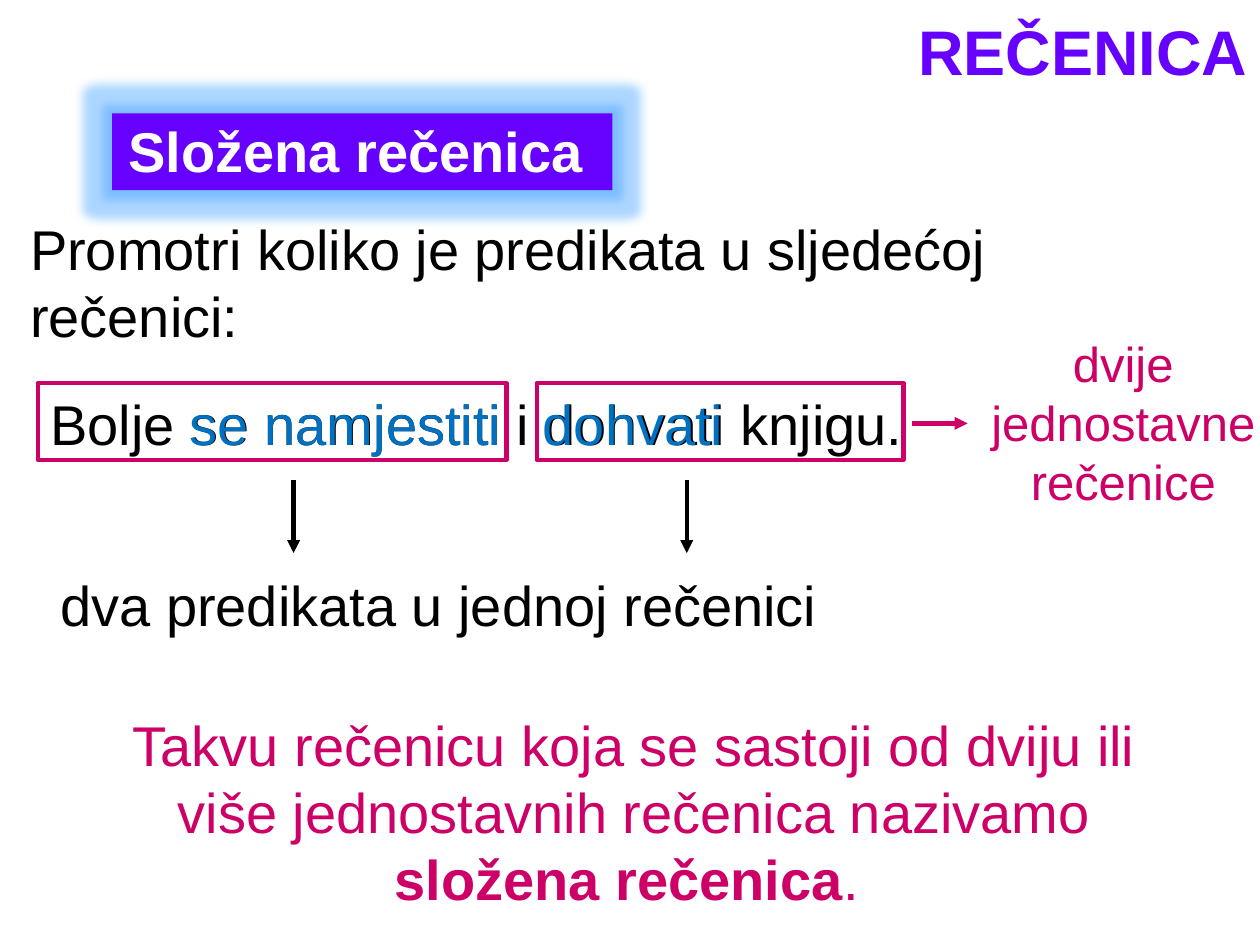
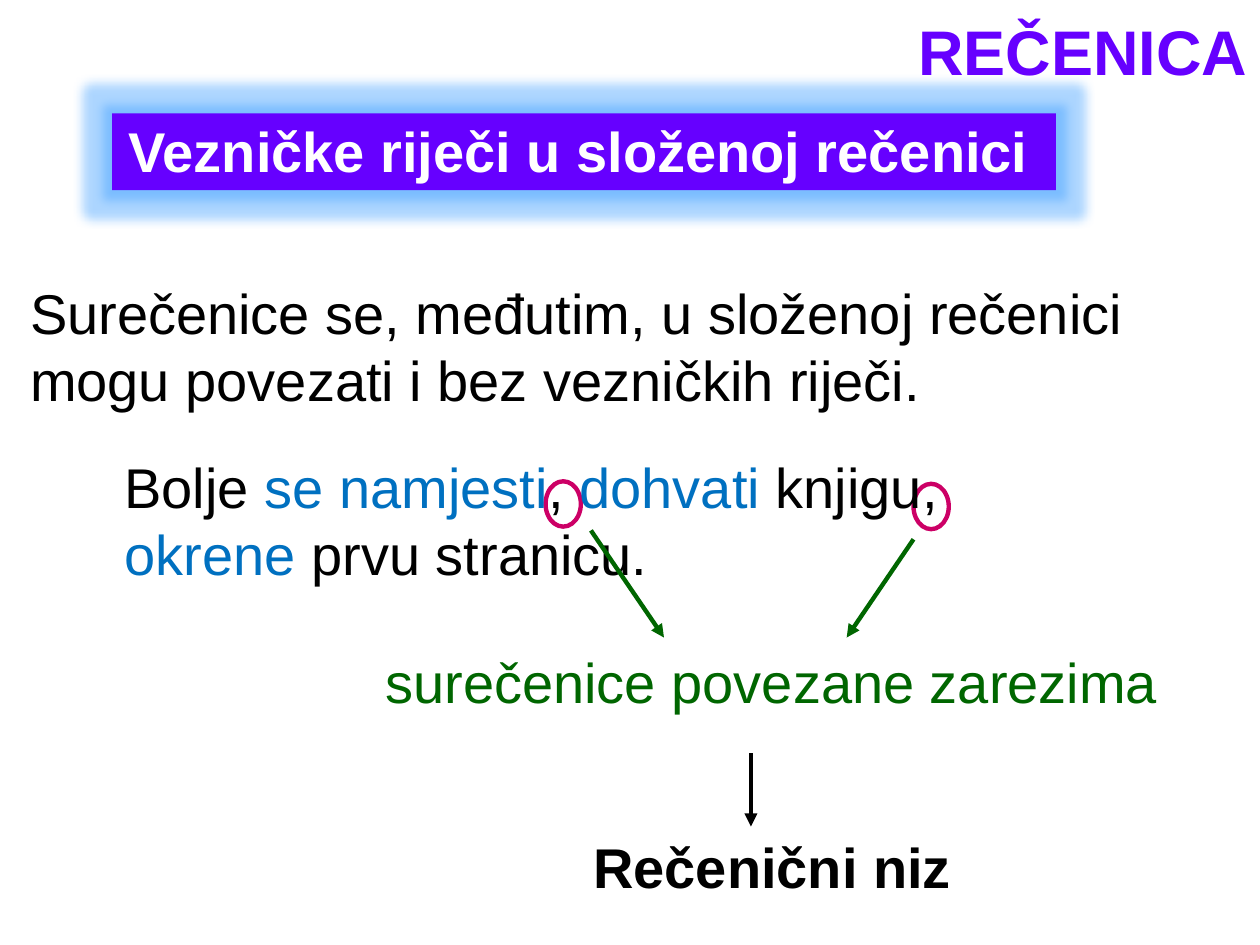
from lxml.etree import SubElement
from pptx import Presentation
from pptx.dml.color import RGBColor
from pptx.enum.shapes import MSO_CONNECTOR, MSO_SHAPE
from pptx.enum.text import MSO_ANCHOR, MSO_AUTO_SIZE, PP_ALIGN
from pptx.oxml import parse_xml
from pptx.oxml.ns import nsdecls, qn
from pptx.util import Inches, Pt

WHITE = RGBColor(0xFF, 0xFF, 0xFF)
BLACK = RGBColor(0x00, 0x00, 0x00)
VIOLET = RGBColor(0x66, 0x00, 0xFF)
MAGENTA = RGBColor(0xCC, 0x00, 0x66)
BLUE = RGBColor(0x00, 0x70, 0xC0)
GREEN = RGBColor(0x00, 0x66, 0x00)
FONT = "Arial"
LINE_WIDTH = Pt(2.5)
GLOW = (
    f'<a:effectLst {nsdecls("a")}><a:glow rad="139700">'
    '<a:srgbClr val="3399FF"><a:alpha val="40000"/></a:srgbClr>'
    "</a:glow></a:effectLst>"
)


def write(box, text, at, size=32, color=BLACK, bold=False, accent=None,
          accent_bold=False, align=PP_ALIGN.LEFT, anchor=MSO_ANCHOR.TOP,
          line_spacing=1.0, space_before=0):
    box.left, box.top, box.width, box.height = map(Inches, at)
    frame = box.text_frame
    frame.word_wrap = True
    frame.auto_size = MSO_AUTO_SIZE.NONE
    frame.vertical_anchor = anchor
    para = frame.paragraphs[0]
    para.alignment = align
    para.line_spacing = line_spacing
    para.space_before = Pt(space_before)
    for number, part in enumerate(text.split("|")):
        accented = number % 2 == 1
        span = para.add_run()
        span.text = part
        span.font.name = FONT
        span.font.size = Pt(size)
        span.font.bold = accent_bold if accented else bold
        span.font.color.rgb = accent if accented else color


def draw_arrow(page, start, end, color):
    arrow = page.shapes.add_connector(
        MSO_CONNECTOR.STRAIGHT, *map(Inches, start + end))
    arrow.line.color.rgb = color
    arrow.line.width = LINE_WIDTH
    properties = arrow.element.spPr
    SubElement(properties.find(qn("a:ln")), qn("a:tailEnd"), type="triangle")
    SubElement(properties, qn("a:effectLst"))


deck = Presentation()
deck.slide_width = Inches(10)
deck.slide_height = Inches(7.5)

pages = [
    {
        "heading": "Složena rečenica",
        "band_width": 3.97,
        "outline": MSO_SHAPE.RECTANGLE,
        "marks": [(4.26, 3.04, 2.91, 0.61), (0.3, 3.04, 3.72, 0.61)],
        "texts": [
            ("Promotri koliko je predikata u sljedećoj rečenici:",
             (0.14, 1.65, 9.3, 1.18), {}),
            ("Bolje se namjestiti i dohvati knjigu.", (0.3, 3.04, 7.1, 0.64), {}),
            ("se namjestiti", (1.41, 3.04, 2.9, 0.64), {"color": BLUE}),
            ("dohvati", (4.21, 3.04, 1.75, 0.64), {"color": BLUE}),
            ("dva predikata u jednoj rečenici", (0.38, 4.48, 6.5, 0.64), {}),
            ("dvije jednostavne rečenice", (7.48, 2.6, 2.87, 1.51),
             {"size": 28, "color": MAGENTA, "align": PP_ALIGN.CENTER}),
            ("Takvu rečenicu koja se sastoji od dviju ili više jednostavnih "
             "rečenica nazivamo |složena rečenica|. ", (0.65, 5.59, 8.77, 1.72),
             {"color": MAGENTA, "accent": MAGENTA, "accent_bold": True,
              "align": PP_ALIGN.CENTER}),
        ],
        "arrows": [
            ((2.33, 3.81), (2.33, 4.39), BLACK),
            ((5.45, 3.81), (5.45, 4.39), BLACK),
            ((7.24, 3.36), (7.68, 3.36), MAGENTA),
        ],
    },
    {
        "heading": "Vezničke riječi u složenoj rečenici",
        "band_width": 7.49,
        "outline": MSO_SHAPE.OVAL,
        "marks": [(4.33, 3.82, 0.28, 0.36), (7.25, 3.84, 0.28, 0.36)],
        "texts": [
            ("Surečenice se, međutim, u složenoj rečenici mogu povezati "
             "i bez vezničkih riječi.", (0.14, 2.16, 9.86, 1.18), {}),
            ("Bolje |se namjesti|, |dohvati| knjigu, |okrene| prvu stranicu.",
             (0.89, 3.54, 7.6, 1.18), {"accent": BLUE}),
            ("surečenice povezane zarezima", (2.96, 5.09, 6.5, 0.64),
             {"color": GREEN}),
            ("Rečenični niz", (4.61, 6.56, 3.3, 0.64), {"bold": True}),
        ],
        "arrows": [
            ((7.25, 4.28), (6.72, 5.06), GREEN),
            ((4.69, 4.21), (5.27, 5.06), GREEN),
            ((5.96, 5.98), (5.96, 6.56), BLACK),
        ],
    },
]

for content in pages:
    page = deck.slides.add_slide(deck.slide_layouts[1])
    title = page.shapes.title
    write(title, "REČENICA", (2.23, 0, 7.77, 0.76), size=36, color=VIOLET,
          bold=True, align=PP_ALIGN.RIGHT, anchor=MSO_ANCHOR.BOTTOM,
          line_spacing=0.9)

    band = page.shapes.add_shape(
        MSO_SHAPE.RECTANGLE,
        *map(Inches, (0.89, 0.9, content["band_width"], 0.61)))
    band.fill.solid()
    band.fill.fore_color.rgb = VIOLET
    band.line.fill.background()
    band.element.spPr.append(parse_xml(GLOW))
    title.element.addprevious(band.element)

    heading = page.placeholders[1]
    write(heading, content["heading"],
          (0.95, 0.66, content["band_width"] + 0.4, 0.84), color=WHITE,
          bold=True, anchor=MSO_ANCHOR.BOTTOM, space_before=10)
    frame = heading.text_frame
    frame.margin_left = frame.margin_right = Inches(0.07)
    frame.margin_top = frame.margin_bottom = Inches(0.04)
    settings = heading.element.txBody.p_lst[0].get_or_add_pPr()
    settings.set("marL", "0")
    settings.set("indent", "0")
    SubElement(settings, qn("a:buNone"))

    for place in content["marks"]:
        mark = page.shapes.add_shape(content["outline"], *map(Inches, place))
        mark.shadow.inherit = False
        mark.fill.solid()
        mark.fill.fore_color.rgb = WHITE
        mark.line.color.rgb = MAGENTA
        mark.line.width = LINE_WIDTH

    for text, place, style in content["texts"]:
        box = page.shapes.add_textbox(*map(Inches, place))
        write(box, text, place, **style)

    for start, end, color in content["arrows"]:
        draw_arrow(page, start, end, color)

deck.save("out.pptx")
